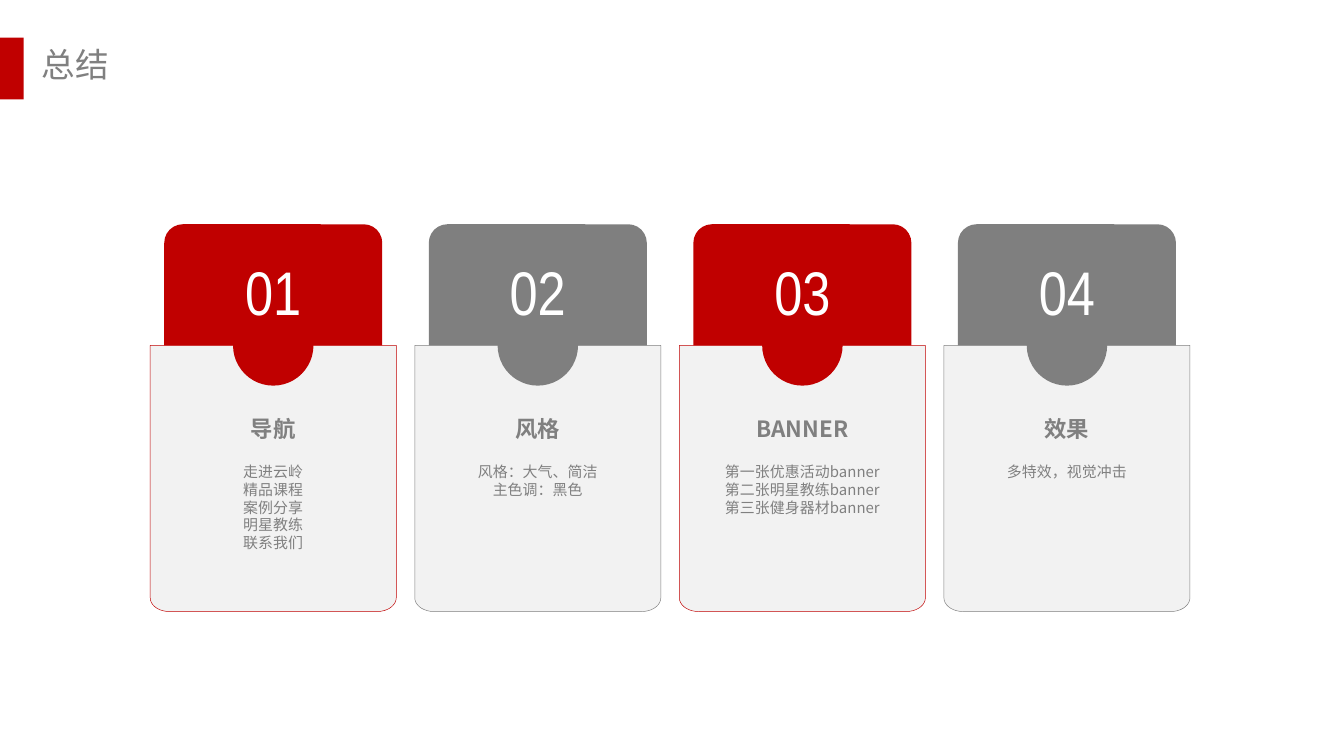
"""Build a summary slide with four numbered pocket cards."""
import math

from lxml import etree
from pptx import Presentation
from pptx import util as u
from pptx.dml.color import RGBColor
from pptx.enum import shapes, text
from pptx.oxml.ns import qn

RED = RGBColor(0xC0, 0x00, 0x00)
GRAY = RGBColor(0x7F, 0x7F, 0x7F)
TEXT_GRAY = RGBColor(0x80, 0x80, 0x80)
PALE = RGBColor(0xF2, 0xF2, 0xF2)
WHITE = RGBColor(0xFF, 0xFF, 0xFF)

CARDS = [
    ("01", "导航", ["走进云岭", "精品课程", "案例分享", "明星教练", "联系我们"]),
    ("02", "风格", ["风格：大气、简洁", "主色调：黑色"]),
    ("03", "BANNER", ["第一张优惠活动banner", "第二张明星教练banner", "第三张健身器材banner"]),
    ("04", "效果", ["多特效，视觉冲击"]),
]
FIRST_LEFT, PITCH, CARD_WIDTH = 2.84, 5.0, 4.65
POCKET_TOP, POCKET_HEIGHT = 6.53, 5.03
CORNER_WIDTH, CORNER_HEIGHT = 0.36, 0.26


class SlideBuilder:
    """Hold the text style and the current slide."""

    font = "Noto Sans CJK SC"
    number_font = "Arial Narrow"

    def __init__(self, deck):
        self.page = deck.slides.add_slide(deck.slide_layouts[5])
        self.target = self.page.shapes

    def start_group(self):
        self.target = self.page.shapes.add_group_shape().shapes

    def paint(self, shape, fill, line=None):
        shape.shadow.inherit = False
        shape.fill.solid()
        shape.fill.fore_color.rgb = fill
        if line is None:
            shape.line.fill.background()
        else:
            shape.line.color.rgb = line
            shape.line.width = u.Pt(0.25)

    def shape(self, kind, left, top, width, height, fill):
        shape = self.target.add_shape(kind, u.Cm(left), u.Cm(top), u.Cm(width), u.Cm(height))
        self.paint(shape, fill)
        return shape

    def pocket(self, left, line):
        right, bottom = left + CARD_WIDTH, POCKET_TOP + POCKET_HEIGHT
        points = [(right, POCKET_TOP)]
        for center, start in ((right - CORNER_WIDTH, 0), (left + CORNER_WIDTH, 90)):
            for degrees in range(start, start + 91, 10):
                angle = math.radians(degrees)
                points.append((center + CORNER_WIDTH * math.cos(angle),
                               bottom - CORNER_HEIGHT + CORNER_HEIGHT * math.sin(angle)))
        outline = self.target.build_freeform(u.Cm(left), u.Cm(POCKET_TOP))
        outline.add_line_segments([(u.Cm(x), u.Cm(y)) for x, y in points], close=True)
        self.paint(outline.convert_to_shape(), PALE, line)

    def format_text(self, frame, size, color, align, font, bold=False):
        frame.vertical_anchor = text.MSO_ANCHOR.TOP
        for para in frame.paragraphs:
            para.alignment = align
            for span in para.runs:
                span.font.size = u.Pt(size)
                span.font.bold = bold
                span.font.color.rgb = color
                span.font.name = font
                east_asian = etree.SubElement(span.font._element, qn("a:ea"))
                east_asian.set("typeface", font)

    def label(self, center, top, width, height, lines, size, color, font=font, bold=False):
        box = self.target.add_textbox(u.Cm(center - width / 2), u.Cm(top), u.Cm(width), u.Cm(height))
        frame = box.text_frame
        frame.word_wrap = True
        frame.margin_left = frame.margin_right = u.Cm(0.18)
        frame.margin_top = frame.margin_bottom = u.Cm(0.1)
        frame.text = "\n".join(lines)
        self.format_text(frame, size, color, text.PP_ALIGN.CENTER, font, bold)

    def title(self, wording):
        title = self.page.shapes.title
        title.left, title.top, title.width, title.height = (
            u.Cm(0.53), u.Cm(0.71), u.Cm(1.78), u.Cm(1.02))
        frame = title.text_frame
        frame.text = wording
        frame.word_wrap = False
        frame.auto_size = text.MSO_AUTO_SIZE.SHAPE_TO_FIT_TEXT
        self.format_text(frame, 18, TEXT_GRAY, text.PP_ALIGN.LEFT, self.font)

    def card(self, left, color, number, heading, lines):
        self.start_group()
        center = left + CARD_WIDTH / 2
        tab = self.shape(shapes.MSO_SHAPE.ROUNDED_RECTANGLE, center - 2.06, 4.24, 4.12, 3.78, color)
        tab.adjustments[0] = 0.093
        self.pocket(left, color)
        self.shape(shapes.MSO_SHAPE.OVAL, center - 0.76, 5.77, 1.52, 1.52, color)
        self.label(center, 4.7, 2.3, 1.63, [number], 33, WHITE, self.number_font)
        self.label(center, 7.75, 2.8, 0.69, [heading], 12, TEXT_GRAY, bold=True)
        self.label(center, 8.64, 3.5, 0.2 + 0.34 * len(lines), lines, 8, TEXT_GRAY)


def main():
    deck = Presentation()
    deck.slide_width, deck.slide_height = u.Cm(25.4), u.Cm(14.29)
    builder = SlideBuilder(deck)
    builder.shape(shapes.MSO_SHAPE.RECTANGLE, 0, 0.71, 0.45, 1.17, RED)
    for index, (number, heading, lines) in enumerate(CARDS):
        color = GRAY if index % 2 else RED
        builder.card(FIRST_LEFT + index * PITCH, color, number, heading, lines)
    builder.title("总结")
    deck.save("out.pptx")


if __name__ == "__main__":
    main()
